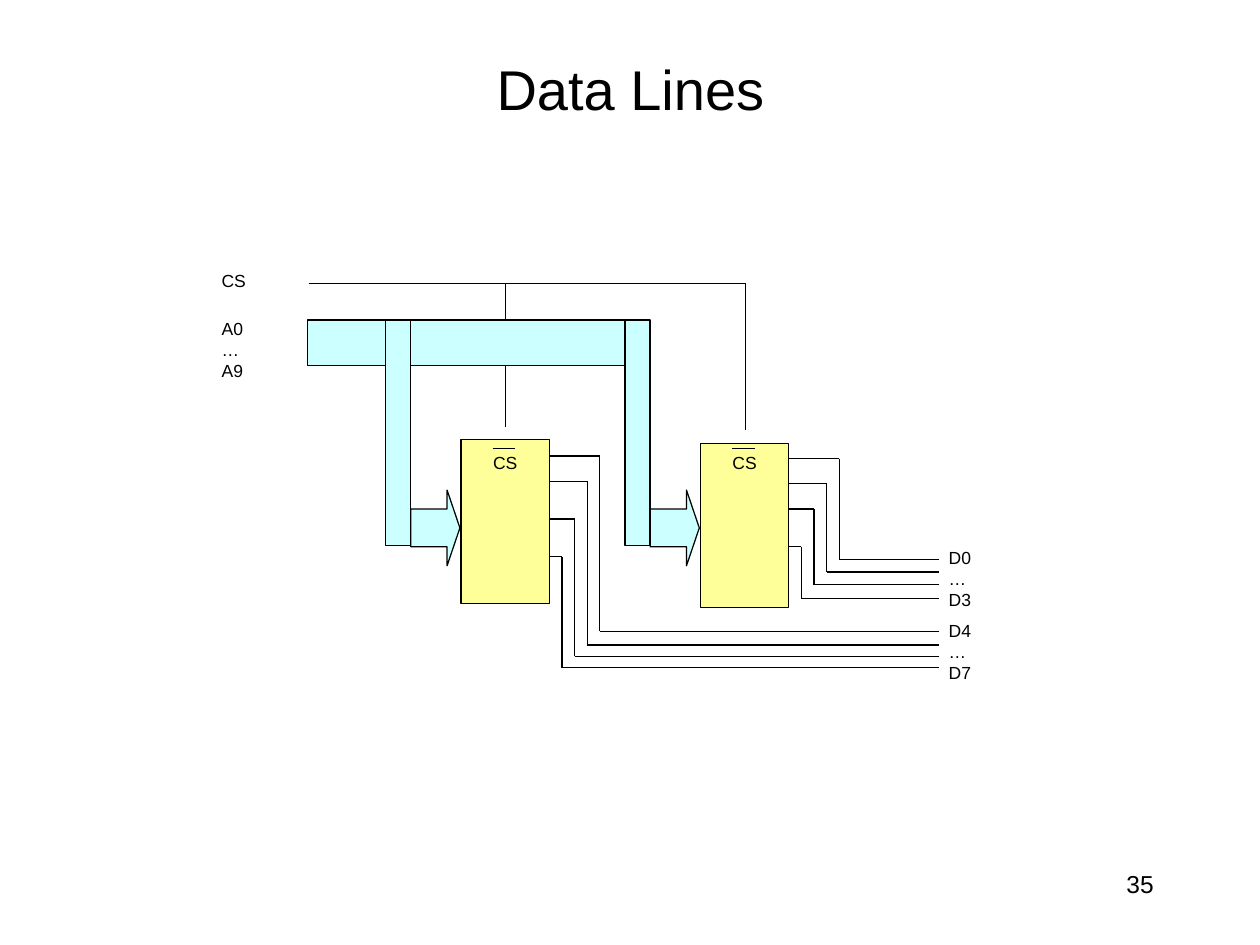
from itertools import pairwise

from lxml.etree import SubElement
from pptx import Presentation
from pptx.dml.color import RGBColor
from pptx.enum.shapes import MSO_CONNECTOR, MSO_SHAPE
from pptx.enum.text import MSO_ANCHOR, PP_ALIGN
from pptx.oxml.ns import qn
from pptx.util import Pt

PX = 9144
COLORS = {"ink": "000000", "chip": "FFFF99", "bus": "CCFFFF"}
LINE_WIDTH = Pt(0.72)


def px(*lengths):
    """Turn px lengths (100 to the inch) into EMU."""
    return [length * PX for length in lengths]


def color(name):
    """Look up a palette colour."""
    return RGBColor.from_string(COLORS[name])


def write(frame, lines, size=10, align=PP_ALIGN.LEFT, gaps=None):
    """Fill a text frame; gaps maps a line index to its space before."""
    frame.word_wrap = True
    frame.vertical_anchor = MSO_ANCHOR.TOP
    frame.margin_left = frame.margin_top = frame.margin_right = frame.margin_bottom = 0
    for index, line in enumerate(lines):
        paragraph = frame.add_paragraph() if index else frame.paragraphs[0]
        paragraph.text = line
        paragraph.alignment = align
        paragraph.space_before = Pt((gaps or {}).get(index, 0))
        paragraph.font.name = "Arial"
        paragraph.font.size = Pt(size)
        paragraph.font.color.rgb = color("ink")


def label(slide, box, lines, **style):
    """Add a text box."""
    write(slide.shapes.add_textbox(*px(*box)).text_frame, lines, **style)


def block(slide, box, fill, kind=MSO_SHAPE.RECTANGLE):
    """Add a filled, thinly outlined shape."""
    shape = slide.shapes.add_shape(kind, *px(*box))
    shape.shadow.inherit = False
    shape.fill.solid()
    shape.fill.fore_color.rgb = color(fill)
    shape.line.color.rgb = color("ink")
    shape.line.width = LINE_WIDTH
    return shape


def wire(slide, *points):
    """Run straight lines through the points."""
    for start, end in pairwise(points):
        segment = slide.shapes.add_connector(MSO_CONNECTOR.STRAIGHT, *px(*start, *end))
        segment.line.color.rgb = color("ink")
        segment.line.width = LINE_WIDTH
        SubElement(segment._element.spPr, qn("a:effectLst"))


def title(slide, box, text):
    """Place the slide title."""
    heading = slide.shapes.title
    heading.left, heading.top, heading.width, heading.height = px(*box)
    write(heading.text_frame, [text], size=32, align=PP_ALIGN.CENTER)


def select_lines(slide, left, top):
    """Draw the chip select line and its branch to each chip."""
    first, second = left + 156, left + 347
    wire(slide, (left, top), (second, top), (second, top + 116))
    wire(slide, (first, top), (first, top + 29))
    wire(slide, (first, top + 65), (first, top + 114))


def memory_bay(slide, left, top, chip_drop, pins, data_rows):
    """Draw an address branch, its chip and the chip's data lines."""
    block(slide, (left, top, 20, 179), "bus")
    arrow = block(slide, (left + 20, top + 135, 39, 60), "bus", MSO_SHAPE.RIGHT_ARROW)
    arrow.adjustments[0] = 0.5
    arrow.adjustments[1] = 0.26

    chip_left, chip_top = left + 60, top + chip_drop
    block(slide, (chip_left, chip_top, 70, 130), "chip")
    label(slide, (chip_left, top + 105, 70, 18), ["CS"], align=PP_ALIGN.CENTER)
    wire(slide, (chip_left + 25, top + 102), (chip_left + 43, top + 102))

    edge = chip_left + 70
    for reach, pin, row in zip((40, 30, 20, 10), pins, data_rows):
        turn, height = edge + reach, chip_top + pin
        wire(slide, (edge, height), (turn, height), (turn, row), (745, row))


def main():
    """Build the slide."""
    deck = Presentation()
    deck.slide_width, deck.slide_height = px(1000, 750)
    slide = deck.slides.add_slide(deck.slide_layouts[5])

    title(slide, (393, 43, 215, 56), "Data Lines")
    select_lines(slide, 245, 225)
    block(slide, (244, 254, 271, 36), "bus")
    memory_bay(slide, 306, 254, 95, (13, 33, 63, 93), (501, 512, 521, 530))
    memory_bay(slide, 496, 254, 98, (12, 32, 52, 82), (444, 454, 464, 475))

    label(slide, (176, 214, 24, 88), ["CS", "A0", "…", "A9"], gaps={1: 15.5})
    label(slide, (753, 434, 24, 109), ["D0", "…", "D3", "D4", "…", "D7"], gaps={3: 5.8})
    label(slide, (894, 690, 27, 25), ["35"], size=14)
    deck.save("out.pptx")


if __name__ == "__main__":
    main()
